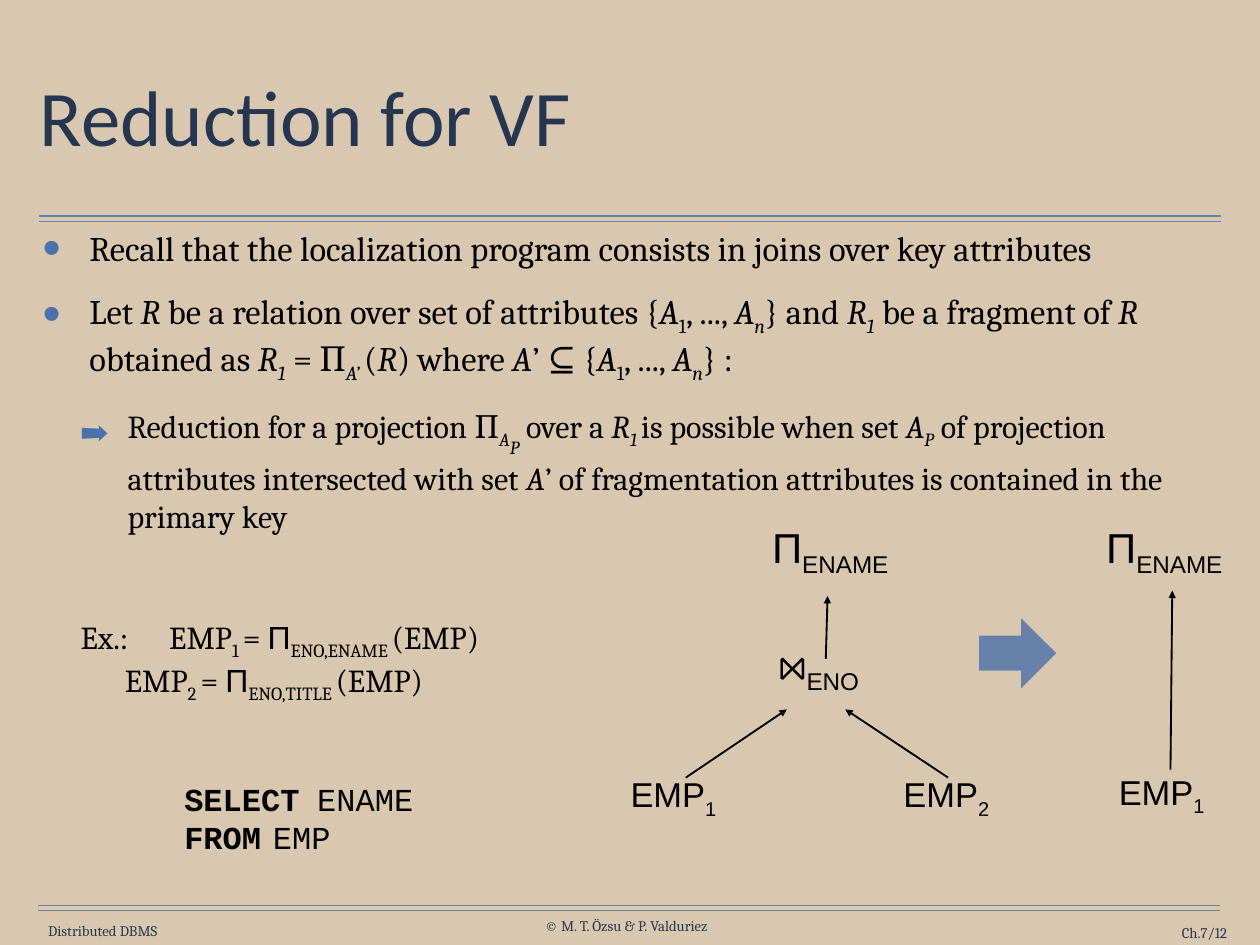
"""Build the slide on reducing vertically fragmented queries."""
from lxml.etree import SubElement
from pptx import Presentation
from pptx.dml.color import RGBColor
from pptx.enum.shapes import MSO_CONNECTOR as Connector, MSO_SHAPE as Shape
from pptx.enum.text import MSO_ANCHOR as Anchor, MSO_AUTO_SIZE as AutoSize, PP_ALIGN as Align
from pptx.oxml.ns import qn
from pptx.util import Inches, Pt

BACKGROUND, NAVY, STEEL, BULLET, BLACK = "D9C8AF", "253750", "6682AA", "4A71A9", "000000"
FOOTER = "263750"
WIDE_TABS = [4.27 + 1.42 * step for step in range(6)]
EXAMPLE_TABS = [1.38, 2.22, *WIDE_TABS]
QUERY_TABS = [1.33, 2.22, 3.33, 3.76, *WIDE_TABS[1:5]]

ITALIC, SUB = {"italic": True}, {"base": -25}
ITALIC_SUB = ITALIC | SUB
ARIAL, BOLD = {"font": "Arial"}, {"bold": True}

ATTRIBUTES = [("A", ITALIC), ("1", SUB), (", ..., ", {}), ("A", ITALIC), ("n", ITALIC_SUB)]
R1 = [("R", ITALIC), ("1", ITALIC_SUB)]
AP = [("A", ITALIC), ("P", ITALIC_SUB)]
RECALL = [("Recall that the localization program consists in joins over key attributes", {})]
RELATION = [
    ("Let ", {}), ("R", ITALIC), (" be a relation over set of attributes {", {}), *ATTRIBUTES,
    ("} and ", {}), *R1, (" be a fragment of ", {}), ("R ", ITALIC), ("obtained as ", {}), *R1,
    (" = Π", {}), ("A’ ", ITALIC_SUB), ("(", {}), ("R", ITALIC), (") where ", {}),
    ("A", ITALIC), ("’ ⊆ {", {}), *ATTRIBUTES, ("} :", {}),
]
REDUCTION = [
    ("Reduction for a projection Π", {}), ("A", ITALIC_SUB), ("P", ITALIC | {"base": -50}),
    (" over a ", {}), *R1, (" ", ITALIC_SUB), ("is possible when set ", {}), *AP,
    (" of projection attributes intersected with set ", {}), ("A", ITALIC),
    ("’ of fragmentation attributes is contained in the primary key", {}),
]


def color(value):
    """Turn a hex string into a colour."""
    return RGBColor.from_string(value)


def add_span(para, text, font="Cambria", size=26, fill=BLACK, bold=False, italic=False, base=0):
    """Append formatted text to a paragraph."""
    span = para.add_run()
    span.text = text
    span.font.name, span.font.size = font, Pt(size)
    span.font.bold, span.font.italic = bold, italic
    span.font.color.rgb = color(fill)
    if base:
        span.font._element.set("baseline", str(base * 1000))


def add_spans(para, spans, **common):
    """Append spans to a paragraph, turning a lone newline into a line break."""
    for text, style in spans:
        if text == "\n":
            para.add_line_break()
        else:
            add_span(para, text, **(common | style))


def set_frame(shape, box, margin=0, anchor=Anchor.TOP, wrap=True):
    """Place a text shape and return its frame."""
    shape.left, shape.top, shape.width, shape.height = map(Inches, box)
    frame = shape.text_frame
    frame.margin_left = frame.margin_right = Inches(margin)
    frame.margin_top = frame.margin_bottom = Inches(margin)
    frame.vertical_anchor, frame.word_wrap = anchor, wrap
    frame.auto_size = AutoSize.NONE
    return frame


def add_label(page, box, spans, align=Align.CENTER, spacing=None, anchor=Anchor.TOP, wrap=False, **common):
    """Add a text box holding one line of spans."""
    shape = page.shapes.add_textbox(*map(Inches, box))
    para = set_frame(shape, box, anchor=anchor, wrap=wrap).paragraphs[0]
    para.alignment = align
    if spacing:
        para.line_spacing = Pt(spacing)
    add_spans(para, spans, **common)


def add_item(frame, spans, left, hanging=0, level=0, before=0, bullet=None, bullet_size=100, tabs=(), **common):
    """Add a body paragraph with its indent, bullet and tab stops."""
    para = frame.paragraphs[0] if not frame.paragraphs[0].runs else frame.add_paragraph()
    para.level, para.alignment = level, Align.LEFT
    para.space_before, para.space_after, para.line_spacing = Pt(before), Pt(0), 1.0
    props = para._p.get_or_add_pPr()
    props.set("marL", str(Inches(left)))
    props.set("indent", str(-Inches(hanging)))
    if bullet:
        SubElement(SubElement(props, qn("a:buClr")), qn("a:srgbClr"), val=BULLET)
        SubElement(props, qn("a:buSzPct"), val=str(bullet_size * 1000))
        SubElement(props, qn("a:buChar"), char=bullet)
    else:
        SubElement(props, qn("a:buNone"))
    if tabs:
        stops = SubElement(props, qn("a:tabLst"))
        for stop in tabs:
            SubElement(stops, qn("a:tab"), pos=str(Inches(stop)), algn="l")
    add_spans(para, spans, **common)


def add_line(page, start, end, fill=BLACK, width=1.5, arrow=True):
    """Draw a straight line, with an arrowhead at its end if wanted."""
    line = page.shapes.add_connector(Connector.STRAIGHT, *map(Inches, (*start, *end)))
    line.line.color.rgb, line.line.width = color(fill), Pt(width)
    if arrow:
        SubElement(line.line._get_or_add_ln(), qn("a:tailEnd"), type="triangle")
    SubElement(line._element.spPr, qn("a:effectLst"))


def add_frame_parts(page):
    """Add the double rules and the footer texts."""
    for left, top in ((0.44, 2.44), (0.43, 10.22)):
        for y in (top, top + 0.06):
            add_line(page, (left, y), (left + 13.34, y), STEEL, 1, arrow=False)
    for text, box, align in (
        ("Distributed DBMS", (0.47, 10.41, 1.38, 0.2), Align.CENTER),
        ("© M. T. Özsu & P. Valduriez", (6.03, 10.35, 2.08, 0.2), Align.CENTER),
        ("Ch.7/12", (12.31, 10.43, 1.54, 0.2), Align.RIGHT),
    ):
        add_label(page, box, [(text, {})], align, anchor=Anchor.MIDDLE,
                  wrap=align == Align.RIGHT, size=12, fill=FOOTER)


def fill_title(page):
    """Write the title."""
    frame = set_frame(page.shapes.title, (0.39, 0.49, 13.44, 1.76), 0.06, Anchor.MIDDLE)
    para = frame.paragraphs[0]
    para.alignment, para.line_spacing = Align.LEFT, 0.9
    add_span(para, "Reduction for VF", "Calibri", 64, NAVY)


def fill_body(page):
    """Write the list, the example fragments and the query."""
    frame = set_frame(page.placeholders[1], (0.42, 2.5, 13.44, 7.09), 0.06)
    for before, spans in ((0, RECALL), (18, RELATION)):
        add_item(frame, spans, 0.53, 0.53, before=before, bullet="•", bullet_size=150, size=28)
    add_item(frame, REDUCTION, 0.96, 0.53, 1, 18, "➡", 85)
    example = [("Ex.: ", {})]
    for number, columns in (("1 ", "ENO,ENAME "), ("2 ", "ENO,TITLE ")):
        if number == "2 ":
            example.append(("\n", {}))
        example += [("\tEMP", {}), (number, SUB), ("= ", {}), ("Π", ARIAL), (columns, SUB), ("(EMP)", {})]
    add_item(frame, example, 0.43, level=1, before=67, tabs=EXAMPLE_TABS)
    for keyword, name, before in (("SELECT\t", "ENAME", 61), ("FROM\t", "EMP", 0)):
        add_item(frame, [(keyword, BOLD), (name, {})], 1.6, level=1, before=before,
                 tabs=QUERY_TABS, font="Courier New")


def add_trees(page):
    """Draw the query tree, its reduced form and the block arrow between them."""
    for left, top, number in ((7.1, 8.79, "1"), (10.18, 8.79, "2"), (12.61, 8.76, "1")):
        add_label(page, (left, top, 1, 0.47), [("EMP", {}), (number, SUB)], spacing=34.1, font="Arial", size=28)
    for left in (8.62, 12.39):
        add_label(page, (left, 5.96, 1.5, 0.58), [("Π", {}), ("ENAME", SUB)], spacing=41.2, font="Arial", size=34)
    join = [("⋈", {"size": 36}), ("ENO", ARIAL | SUB)]
    add_label(page, (8.61, 7.42, 1.26, 0.47), join, spacing=31.3, wrap=True, size=34)
    for start, end in (
        ((7.74, 8.78), (8.88, 8.01)),
        ((10.7, 8.78), (9.54, 8.01)),
        ((9.32, 7.44), (9.34, 6.73)),
        ((13.21, 8.69), (13.23, 6.67)),
    ):
        add_line(page, start, end)
    arrow = page.shapes.add_shape(Shape.RIGHT_ARROW, *map(Inches, (11.05, 6.98, 0.87, 0.79)))
    arrow.shadow.inherit = False
    arrow.fill.solid()
    arrow.fill.fore_color.rgb = color(STEEL)
    arrow.line.fill.background()


def main():
    """Build and save the deck."""
    deck = Presentation()
    deck.slide_width, deck.slide_height = Inches(14.22), Inches(10.67)
    page = deck.slides.add_slide(deck.slide_layouts[1])
    page.background.fill.solid()
    page.background.fill.fore_color.rgb = color(BACKGROUND)
    add_frame_parts(page)
    fill_title(page)
    fill_body(page)
    add_trees(page)
    deck.save("out.pptx")


if __name__ == "__main__":
    main()
